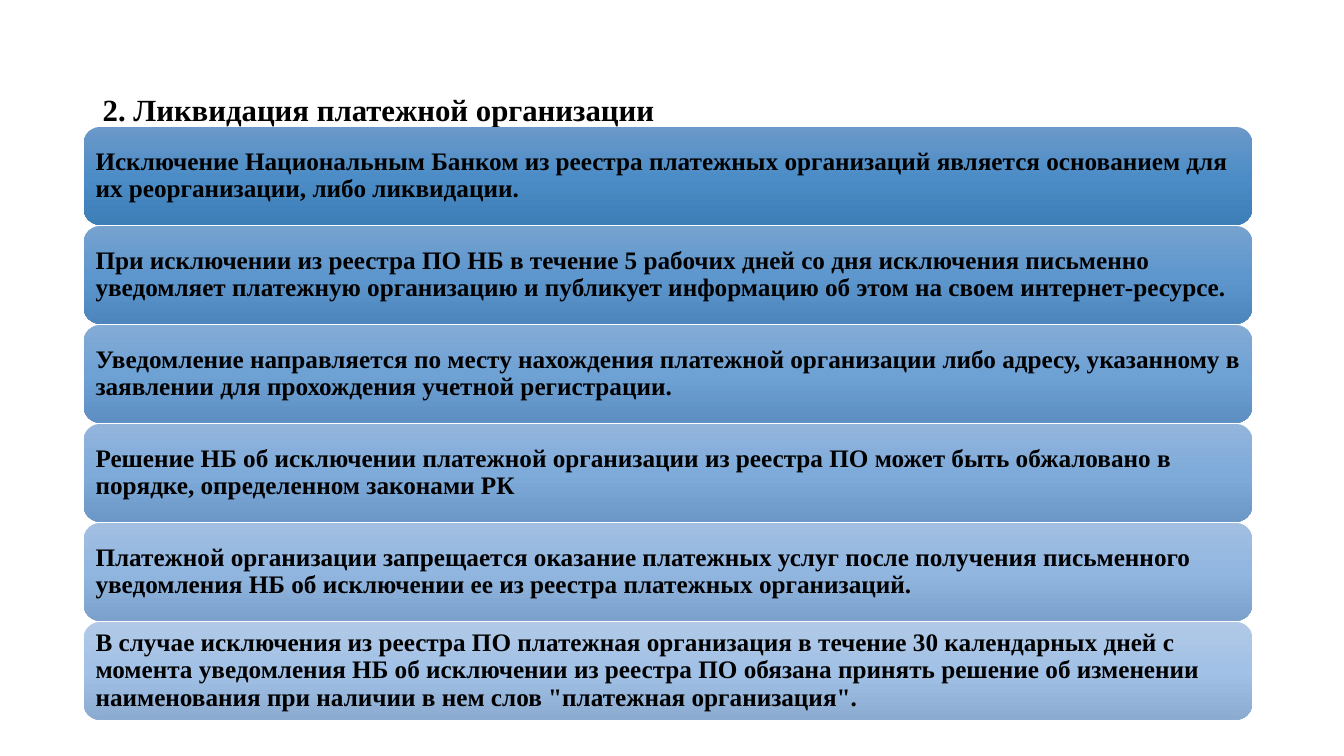
"""Build the slide on the liquidation of a payment organization."""
from copy import deepcopy
from dataclasses import dataclass

from pptx import Presentation
from pptx.dml.color import RGBColor
from pptx.enum.shapes import MSO_SHAPE as Preset
from pptx.enum.text import MSO_ANCHOR as Anchor, PP_ALIGN as Align
from pptx.oxml.ns import qn
from pptx.util import Inches, Pt

COLORS = {
    "text": "000000",
    "top1": "6B99C9", "middle1": "4D8DC7", "bottom1": "3E7EB7",
    "top2": "77A2CF", "middle2": "5E97CE", "bottom2": "4D86BD",
    "top3": "84ABD6", "middle3": "6EA1D4", "bottom3": "5D8FC2",
    "top4": "93B5DC", "middle4": "7FABDA", "bottom4": "6C98C7",
    "top5": "A2BFE2", "middle5": "91B6E0", "bottom5": "7CA1CC",
    "top6": "B1C9E7", "middle6": "A2C1E6", "bottom6": "8CABD1",
}
FONT = "Times New Roman"
RULE_LEFT, RULE_TOP, RULE_WIDTH, RULE_HEIGHT = 0.83, 1.26, 11.59, 0.97
RULE_STEP = 0.982


@dataclass(frozen=True)
class Rule:
    number: int
    text: str

    @property
    def top(self) -> float:
        return RULE_TOP + (self.number - 1) * RULE_STEP

    @property
    def shades(self) -> list[str]:
        return [COLORS[f"{level}{self.number}"] for level in ("top", "middle", "bottom")]


RULE_TEXTS = [
    "Исключение Национальным Банком из реестра платежных организаций является "
    "основанием для их реорганизации, либо ликвидации.",
    "При исключении из реестра ПО НБ в течение 5 рабочих дней со дня исключения "
    "письменно уведомляет платежную организацию и публикует информацию об этом "
    "на своем интернет-ресурсе.",
    "Уведомление направляется по месту нахождения платежной организации либо "
    "адресу, указанному в заявлении для прохождения учетной регистрации.",
    "Решение НБ об исключении платежной организации из реестра ПО может быть "
    "обжаловано в порядке, определенном законами РК",
    "Платежной организации запрещается оказание платежных услуг после получения "
    "письменного уведомления НБ об исключении ее из реестра платежных организаций.",
    "В случае исключения из реестра ПО платежная организация в течение 30 "
    "календарных дней с момента уведомления НБ об исключении из реестра ПО обязана "
    "принять решение об изменении наименования при наличии в нем слов "
    '"платежная организация".',
]
RULES = [Rule(number, text) for number, text in enumerate(RULE_TEXTS, 1)]


def write_text(shape, text: str, *, size: float, anchor: Anchor, inset: tuple[float, float]) -> None:
    """Fill a shape with one bold left-aligned paragraph."""
    frame = shape.text_frame
    frame.word_wrap = True
    frame.vertical_anchor = anchor
    frame.margin_left = frame.margin_right = Inches(inset[0])
    frame.margin_top = frame.margin_bottom = Inches(inset[1])
    paragraph = frame.paragraphs[0]
    paragraph.alignment = Align.LEFT
    paragraph.line_spacing = 0.9
    run = paragraph.add_run()
    run.text = text
    run.font.name = FONT
    run.font.size = Pt(size)
    run.font.bold = True
    run.font.color.rgb = RGBColor.from_string(COLORS["text"])


def shade(shape, shades: list[str]) -> None:
    """Give a shape a downward gradient with evenly spaced stops."""
    shape.fill.gradient()
    shape.fill.gradient_angle = 270
    stop_list = shape.fill.gradient_stops[0]._gs.getparent()
    first_stop = stop_list.find(qn("a:gs"))
    first_stop.addnext(deepcopy(first_stop))
    for index, (stop, color) in enumerate(zip(shape.fill.gradient_stops, shades)):
        stop.position = index / (len(shades) - 1)
        stop.color.rgb = RGBColor.from_string(color)


def draw_rule(slide, rule: Rule) -> None:
    """Draw one rounded bar with its rule."""
    bar = slide.shapes.add_shape(
        Preset.ROUNDED_RECTANGLE, Inches(RULE_LEFT), Inches(rule.top),
        Inches(RULE_WIDTH), Inches(RULE_HEIGHT))
    bar.shadow.inherit = False
    bar.line.fill.background()
    shade(bar, rule.shades)
    write_text(bar, rule.text, size=18, anchor=Anchor.MIDDLE, inset=(0.07, 0.07))


def main() -> None:
    """Build and save the presentation."""
    presentation = Presentation()
    presentation.slide_width, presentation.slide_height = Inches(13.33), Inches(7.5)
    slide = presentation.slides.add_slide(presentation.slide_layouts[6])
    heading = slide.shapes.add_textbox(Inches(0.92), Inches(0.89), Inches(11.5), Inches(0.45))
    write_text(heading, "2. Ликвидация платежной организации",
               size=22, anchor=Anchor.TOP, inset=(0.1, 0.05))
    for rule in RULES:
        draw_rule(slide, rule)
    presentation.save("out.pptx")


if __name__ == "__main__":
    main()
